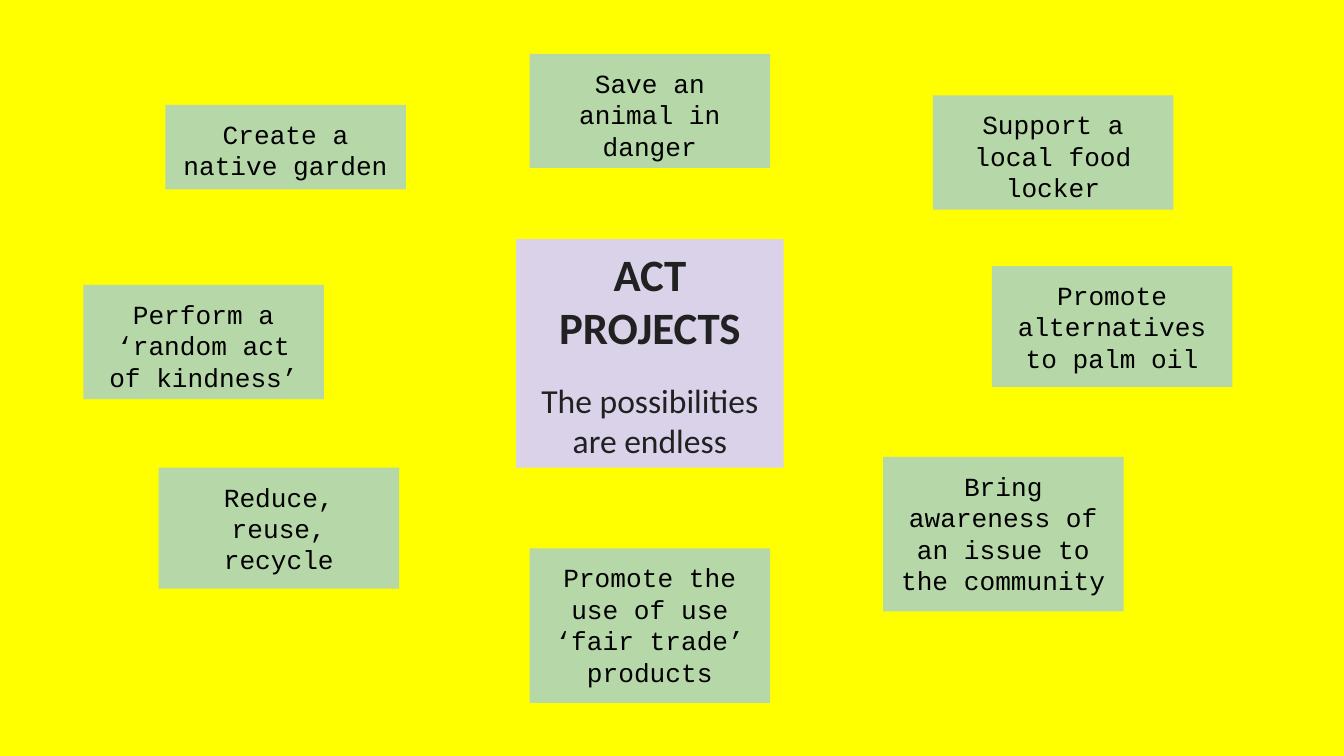
import pptx
import pptx.util
import pptx.dml.color
import pptx.enum.shapes
import pptx.enum.text

Inches = pptx.util.Inches
RGBColor = pptx.dml.color.RGBColor
Anchor = pptx.enum.text.MSO_ANCHOR

YELLOW = RGBColor(0xFF, 0xFF, 0x00)
LILAC = RGBColor(0xD9, 0xD2, 0xE9)
GREEN = RGBColor(0xB6, 0xD7, 0xA8)
CHARCOAL = RGBColor(0x21, 0x21, 0x21)
BLACK = RGBColor(0x00, 0x00, 0x00)

IDEA_WIDTH = 1.79
IDEAS = [
    ("Create a native garden", 1.23, 0.78, 0.63),
    ("Save an animal in danger", 3.94, 0.4, 0.85),
    ("Reduce, reuse, recycle", 1.18, 3.48, 0.9),
    ("Promote the use of use ‘fair trade’ products", 3.94, 4.08, 1.15),
    ("Bring awareness of an issue to the community", 6.57, 3.4, 1.15),
    ("Promote alternatives to palm oil", 7.38, 1.98, 0.9),
    ("Support a local food locker", 6.94, 0.71, 0.85),
    ("Perform a ‘random act of kindness’", 0.62, 2.12, 0.85),
]


def write_text(para, text, *, font, size, color, bold=False, before=0):
    para.alignment = pptx.enum.text.PP_ALIGN.CENTER
    para.space_before = pptx.util.Pt(before)
    span = para.add_run()
    span.text = text
    span.font.name = font
    span.font.size = pptx.util.Pt(size)
    span.font.bold = bold
    span.font.color.rgb = color


class ProjectMap:
    """Draws a central topic and the project ideas around it."""

    def __init__(self, page):
        self.page = page
        self.margin = Inches(0.1)
        self.heading = {"font": "Calibri", "color": CHARCOAL}
        self.body = {"font": "Courier New", "size": 14, "color": BLACK}

    def background(self, color):
        fill = self.page.background.fill
        fill.solid()
        fill.fore_color.rgb = color

    def panel(self, left, top, width, height, color, anchor):
        box = self.page.shapes.add_shape(
            pptx.enum.shapes.MSO_SHAPE.RECTANGLE,
            Inches(left), Inches(top), Inches(width), Inches(height))
        box.shadow.inherit = False
        box.fill.solid()
        box.fill.fore_color.rgb = color
        box.line.fill.background()
        frame = box.text_frame
        frame.word_wrap = True
        frame.vertical_anchor = anchor
        frame.margin_left = frame.margin_right = self.margin
        frame.margin_top = frame.margin_bottom = self.margin
        return frame

    def topic(self, title, subtitle, left, top, width, height):
        frame = self.panel(left, top, width, height, LILAC, Anchor.MIDDLE)
        write_text(frame.paragraphs[0], title, size=24, bold=True, **self.heading)
        write_text(frame.add_paragraph(), subtitle, size=18, before=14, **self.heading)

    def idea(self, text, left, top, height):
        frame = self.panel(left, top, IDEA_WIDTH, height, GREEN, Anchor.TOP)
        write_text(frame.paragraphs[0], text, **self.body)


def main():
    deck = pptx.Presentation()
    deck.slide_width = Inches(10)
    deck.slide_height = deck.slide_width * 9 // 16
    project_map = ProjectMap(deck.slides.add_slide(deck.slide_layouts[6]))
    project_map.background(YELLOW)
    project_map.topic("ACT PROJECTS", "The possibilities are endless", 3.84, 1.78, 1.99, 1.7)
    for idea in IDEAS:
        project_map.idea(*idea)
    deck.save("out.pptx")


if __name__ == "__main__":
    main()
